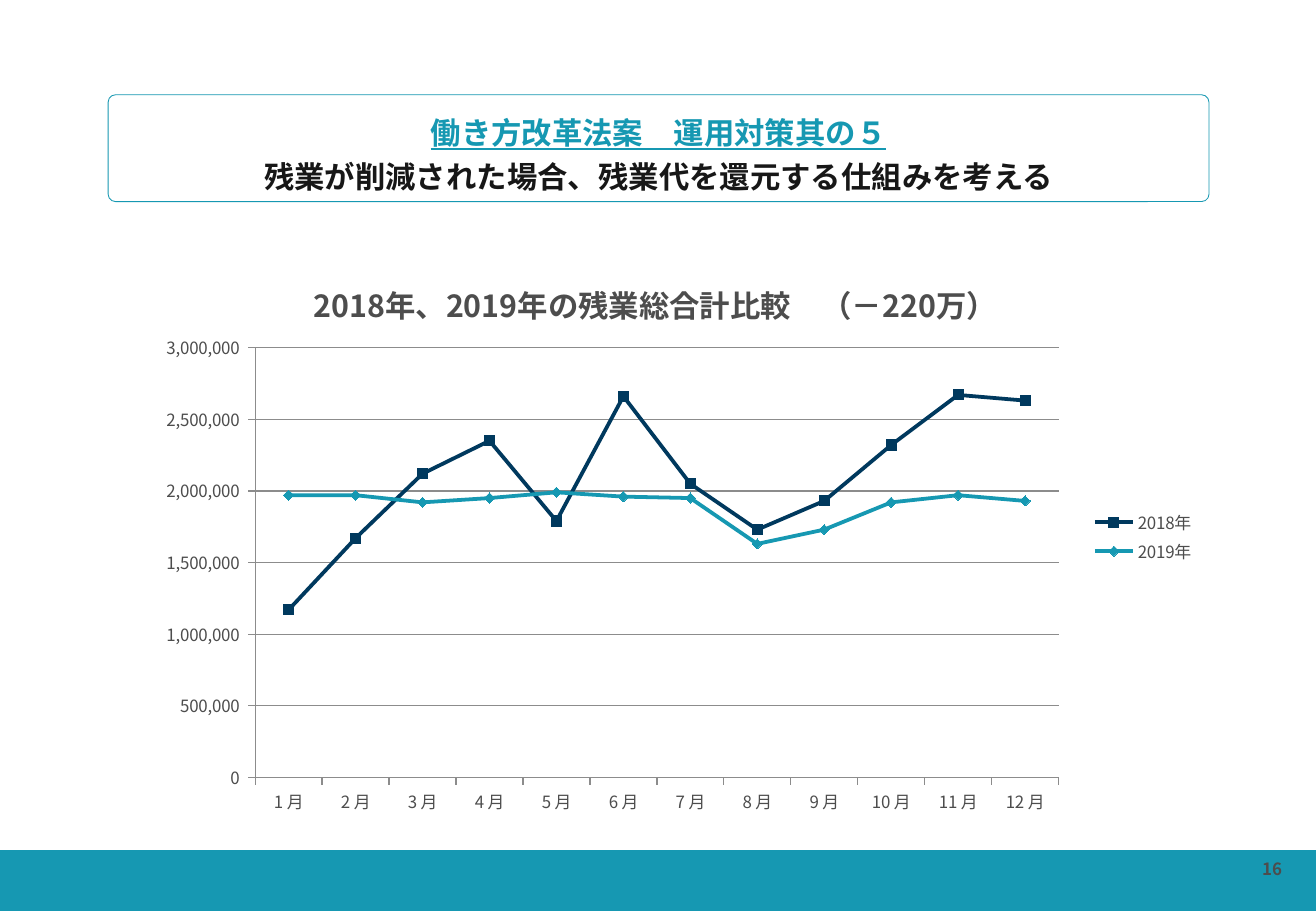
from math import cos, pi, sin

from pptx import Presentation
from pptx.chart.data import CategoryChartData
from pptx.dml.color import RGBColor
from pptx.enum.chart import (XL_CHART_TYPE, XL_LEGEND_POSITION,
                             XL_MARKER_STYLE, XL_TICK_MARK)
from pptx.enum.shapes import MSO_SHAPE
from pptx.enum.text import MSO_ANCHOR, PP_ALIGN
from pptx.oxml import parse_xml
from pptx.oxml.ns import nsdecls, qn
from pptx.util import Inches, Pt

LINE = XL_CHART_TYPE.LINE_MARKERS
RIGHT = XL_LEGEND_POSITION.RIGHT
SQUARE, DIAMOND = XL_MARKER_STYLE.SQUARE, XL_MARKER_STYLE.DIAMOND
OUT = XL_TICK_MARK.OUTSIDE
ROUND = MSO_SHAPE.ROUNDED_RECTANGLE
MIDDLE = MSO_ANCHOR.MIDDLE
CENTER, END = PP_ALIGN.CENTER, PP_ALIGN.RIGHT

FACE = "Noto Sans CJK JP"
TEAL, NAVY, INK, GREY, RULE = "1698B2", "00395E", "171717", "4D4D4D", "8C8C8C"
WIDE, HIGH = 10.83, 7.5

MONTHS = [f"{n} 月" for n in range(1, 13)]
# Name, colour, marker, overtime pay in units of 10,000
YEARS = [
    ("2018年", NAVY, SQUARE,
     (117, 167, 212, 235, 179, 266, 205, 173, 193, 232, 267, 263)),
    ("2019年", TEAL, DIAMOND,
     (197, 197, 192, 195, 199, 196, 195, 163, 173, 192, 197, 193)),
]


def paint(item, color):
    """Give a fill a solid colour."""
    item.solid()
    item.fore_color.rgb = RGBColor.from_string(color)


def style(font, size, color, bold=False):
    font.name, font.size, font.bold = FACE, Pt(size), bold
    font.color.rgb = RGBColor.from_string(color)
    latin = font._element.find(qn("a:latin"))
    latin.addnext(parse_xml(f'<a:ea {nsdecls("a")} typeface="{FACE}"/>'))


def inset(frame, left, top, right, low):
    frame.margin_left, frame.margin_top = Inches(left), Inches(top)
    frame.margin_right, frame.margin_bottom = Inches(right), Inches(low)
    frame.vertical_anchor = MIDDLE
    frame.word_wrap = True


def place(node, after, inner="", **share):
    """Lay out a chart part by shares of the chart's size."""
    old = node.find(qn("c:layout"))
    if old is not None:
        node.remove(old)
    modes = "".join(f'<c:{k}Mode val="edge"/>' for k in "xy")
    sizes = "".join(f'<c:{k} val="{v}"/>' for k, v in share.items())
    layout = parse_xml(f'<c:layout {nsdecls("c")}><c:manualLayout>{inner}'
                       f'{modes}{sizes}</c:manualLayout></c:layout>')
    if after is None:
        node.insert(0, layout)
    else:
        after.addnext(layout)


def border(slide, wide, high, edge, bend):
    """Frame around the page with a round-cornered opening."""
    pen = slide.shapes.build_freeform(0, 0, Inches(1))
    pen.add_line_segments([(wide, 0), (wide, high), (0, high)])
    near, far, low = edge + bend, wide - edge - bend, high - edge - bend
    spots = [(far, low), (near, low), (near, near), (far, near)]
    hole = [(x + bend * cos(a), y + bend * sin(a))
            for i, (x, y) in enumerate(spots)
            for a in (pi / 2 * (i + step / 4) for step in range(5))]
    pen.move_to(*hole[0])
    pen.add_line_segments(hole[1:])
    shape = pen.convert_to_shape()
    shape.shadow.inherit = False
    paint(shape.fill, TEAL)
    shape.line.fill.background()


def number(slide, box, text):
    frame = slide.shapes.add_textbox(*map(Inches, box)).text_frame
    inset(frame, 0, 0, 0, 0)
    para = frame.paragraphs[0]
    para.text, para.alignment = text, END
    style(para.font, 10, GREY, True)


def heading(slide, box, top, main):
    """Outlined box with an underlined line over a plain one."""
    shape = slide.shapes.add_shape(ROUND, *map(Inches, box))
    shape.adjustments[0] = 0.07
    shape.shadow.inherit = False
    shape.fill.background()
    paint(shape.line.fill, TEAL)
    shape.line.width = Pt(0.5)
    inset(shape.text_frame, 0.2, 0.08, 0.2, 0.04)
    para = shape.text_frame.paragraphs[0]
    para.alignment, para.line_spacing = CENTER, 1.2
    for text, color in ((top, TEAL), (main, INK)):
        run = para.add_run()
        run.text = text
        style(run.font, 18, color, True)
        run.font.underline = color == TEAL
        if color == TEAL:
            para.add_line_break()


def graph(slide, box, title):
    """Line chart of monthly overtime pay."""
    data = CategoryChartData(number_format="#,##0")
    data.categories = MONTHS
    for name, _, _, vals in YEARS:
        data.add_series(name, [v * 10000 for v in vals])
    chart = slide.shapes.add_chart(LINE, *map(Inches, box), data).chart
    style(chart.font, 10, GREY)

    # Title and plot area
    para = chart.chart_title.text_frame.paragraphs[0]
    para.text = title
    style(para.font, 18, GREY, True)
    head = chart.chart_title._element
    place(head, head.find(qn("c:tx")), x=0.15, y=0.04)
    place(chart._chartSpace.chart.plotArea, None,
          '<c:layoutTarget val="inner"/>', x=0.1, y=0.17, w=0.76, h=0.75)

    # Axes and legend
    pay = chart.value_axis
    pay.minimum_scale, pay.maximum_scale, pay.major_unit = 0, 3000000, 500000
    pay.tick_labels.number_format = r"#,##0_);[Red]\(#,##0\)"
    pay.tick_labels.number_format_is_linked = False
    for axis in (pay, chart.category_axis):
        axis.major_tick_mark = OUT
        paint(axis.format.line.fill, RULE)
    paint(pay.major_gridlines.format.line.fill, RULE)
    chart.has_legend = True
    chart.legend.position = RIGHT
    chart.legend.include_in_layout = False

    # Series
    plot = chart.plots[0]
    plot.vary_by_categories = False
    for line, (_, color, mark, _) in zip(plot.series, YEARS):
        line.smooth = False
        line.format.line.width = Pt(2.25)
        paint(line.format.line.fill, color)
        line.marker.style, line.marker.size = mark, 6
        paint(line.marker.format.fill, color)
        paint(line.marker.format.line.fill, color)


def main():
    deck = Presentation()
    deck.slide_width, deck.slide_height = Inches(WIDE), Inches(HIGH)
    slide = deck.slides.add_slide(deck.slide_layouts[6])
    border(slide, WIDE, HIGH, 0.16, 0.04)
    number(slide, (8.02, 7.01, 2.53, 0.28), "16")
    heading(slide, (0.89, 0.78, 9.06, 0.88),
            "働き方改革法案　運用対策其の５",
            "残業が削減された場合、残業代を還元する仕組みを考える")
    graph(slide, (1.23, 2.06, 8.7, 4.72),
          "2018年、2019年の残業総合計比較　（－220万）")
    deck.save("out.pptx")


if __name__ == "__main__":
    main()
